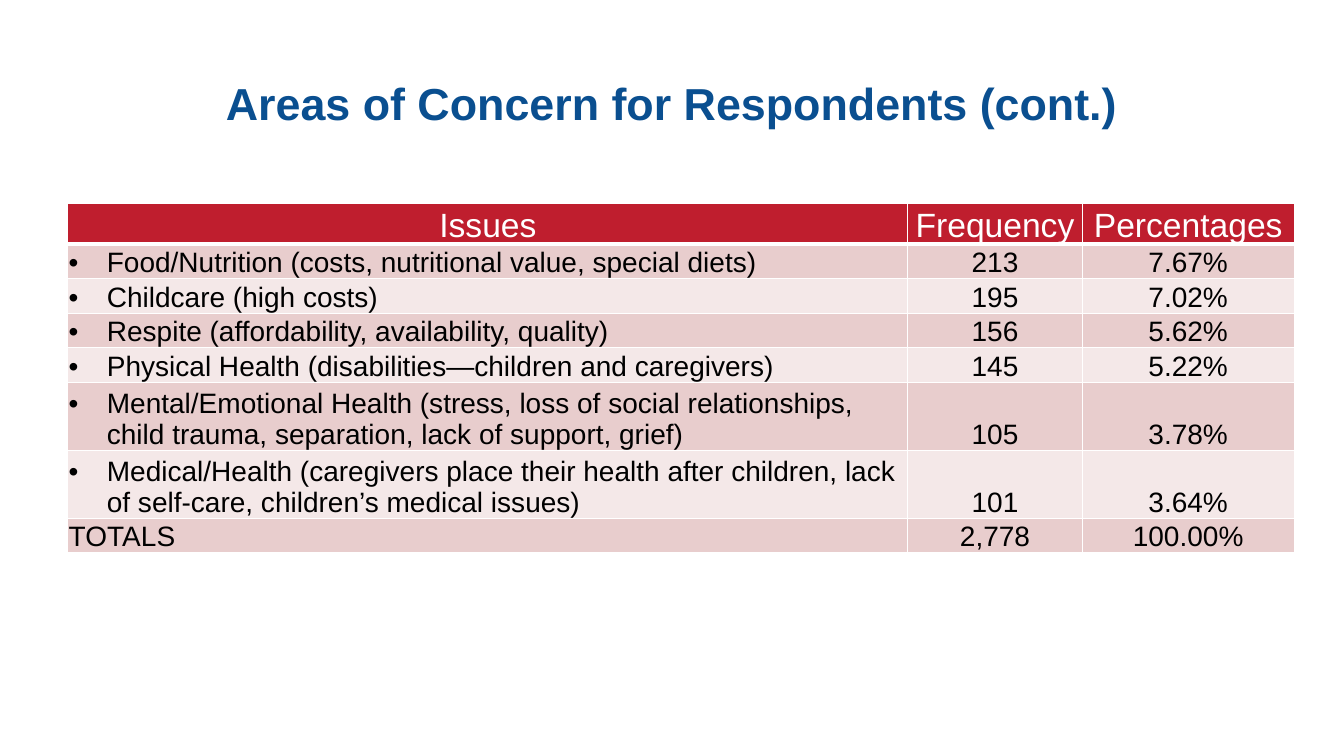
from lxml.etree import SubElement
from pptx import Presentation
from pptx.dml.color import RGBColor
from pptx.enum.text import MSO_ANCHOR, PP_ALIGN
from pptx.oxml.ns import qn
from pptx.util import Pt

COLORS = {
    "title": "0A4F90",
    "header": "BF1E2E",
    "odd": "E8CDCD",
    "even": "F4E8E8",
    "light": "FFFFFF",
    "dark": "000000",
}
HEADINGS = ("Issues", "Frequency", "Percentages")
CONCERNS = [
    ("Food/Nutrition (costs, nutritional value, special diets)", "213", "7.67%"),
    ("Childcare (high costs)", "195", "7.02%"),
    ("Respite (affordability, availability, quality)", "156", "5.62%"),
    ("Physical Health (disabilities—children and caregivers)", "145", "5.22%"),
    ("Mental/Emotional Health (stress, loss of social relationships, "
     "child trauma, separation, lack of support, grief)", "105", "3.78%"),
    ("Medical/Health (caregivers place their health after children, "
     "lack of self-care, children’s medical issues)", "101", "3.64%"),
]
TOTALS = ("TOTALS", "2,778", "100.00%")
COLUMN_WIDTHS = (600, 124.5, 151.5)
ROW_HEIGHT = 19.5


def apply_format(target, values):
    for name, value in values.items():
        setattr(target, name, value)


class ConcernSlide:
    font_name = "Arial"
    bullet_indent = Pt(27.25)
    cell_format = {
        "vertical_anchor": MSO_ANCHOR.BOTTOM,
        "margin_left": Pt(0.6),
        "margin_right": Pt(0.6),
        "margin_top": Pt(0.6),
        "margin_bottom": 0,
    }

    def __init__(self, slide):
        self.slide = slide

    def wording(self, paragraph, text, size, color, align, bold=False):
        paragraph.text = text
        paragraph.alignment = align
        apply_format(paragraph.font, {"name": self.font_name, "size": Pt(size), "bold": bold})
        paragraph.font.color.rgb = RGBColor.from_string(COLORS[color])

    def title(self, text, left, top, width, height):
        frame = self.slide.shapes.add_textbox(Pt(left), Pt(top), Pt(width), Pt(height)).text_frame
        apply_format(frame, {"word_wrap": True, "vertical_anchor": MSO_ANCHOR.MIDDLE})
        self.wording(frame.paragraphs[0], text, 32, "title", PP_ALIGN.CENTER, bold=True)

    def bullet(self, paragraph):
        properties = paragraph._p.get_or_add_pPr()
        properties.set("marL", str(self.bullet_indent))
        properties.set("indent", str(-self.bullet_indent))
        SubElement(properties, qn("a:buFont"), typeface=self.font_name)
        SubElement(properties, qn("a:buChar"), char="•")

    def borders(self, cell, top, bottom):
        properties = cell._tc.get_or_add_tcPr()
        for side, width in {"L": 1, "R": 1, "T": top, "B": bottom}.items():
            line = SubElement(properties, qn(f"a:ln{side}"), w=str(Pt(width)))
            fill = SubElement(line, qn("a:solidFill"))
            SubElement(fill, qn("a:srgbClr"), val=COLORS["light"])

    def table(self, rows, left, top):
        table = self.slide.shapes.add_table(
            len(rows), len(COLUMN_WIDTHS), Pt(left), Pt(top),
            Pt(sum(COLUMN_WIDTHS)), Pt(ROW_HEIGHT * len(rows))).table
        for column, width in zip(table.columns, COLUMN_WIDTHS):
            column.width = Pt(width)
        for r, values in enumerate(rows):
            header = r == 0
            size, ink = (24, "light") if header else (20, "dark")
            shade = "header" if header else "odd" if r % 2 else "even"
            for c, text in enumerate(values):
                cell = table.cell(r, c)
                apply_format(cell, self.cell_format)
                self.borders(cell, top=3 if r == 1 else 1, bottom=3 if header else 1)
                cell.fill.solid()
                cell.fill.fore_color.rgb = RGBColor.from_string(COLORS[shade])
                paragraph = cell.text_frame.paragraphs[0]
                if c == 0 and 0 < r < len(rows) - 1:
                    self.bullet(paragraph)
                align = PP_ALIGN.CENTER if header or c else PP_ALIGN.LEFT
                self.wording(paragraph, text, size, ink, align)


def main():
    presentation = Presentation()
    apply_format(presentation, {"slide_width": Pt(960), "slide_height": Pt(540)})
    page = ConcernSlide(presentation.slides.add_slide(presentation.slide_layouts[6]))
    page.title("Areas of Concern for Respondents (cont.)", 48, 28, 864, 90)
    page.table([HEADINGS, *CONCERNS, TOTALS], 48.5, 145)
    presentation.save("out.pptx")


if __name__ == "__main__":
    main()
